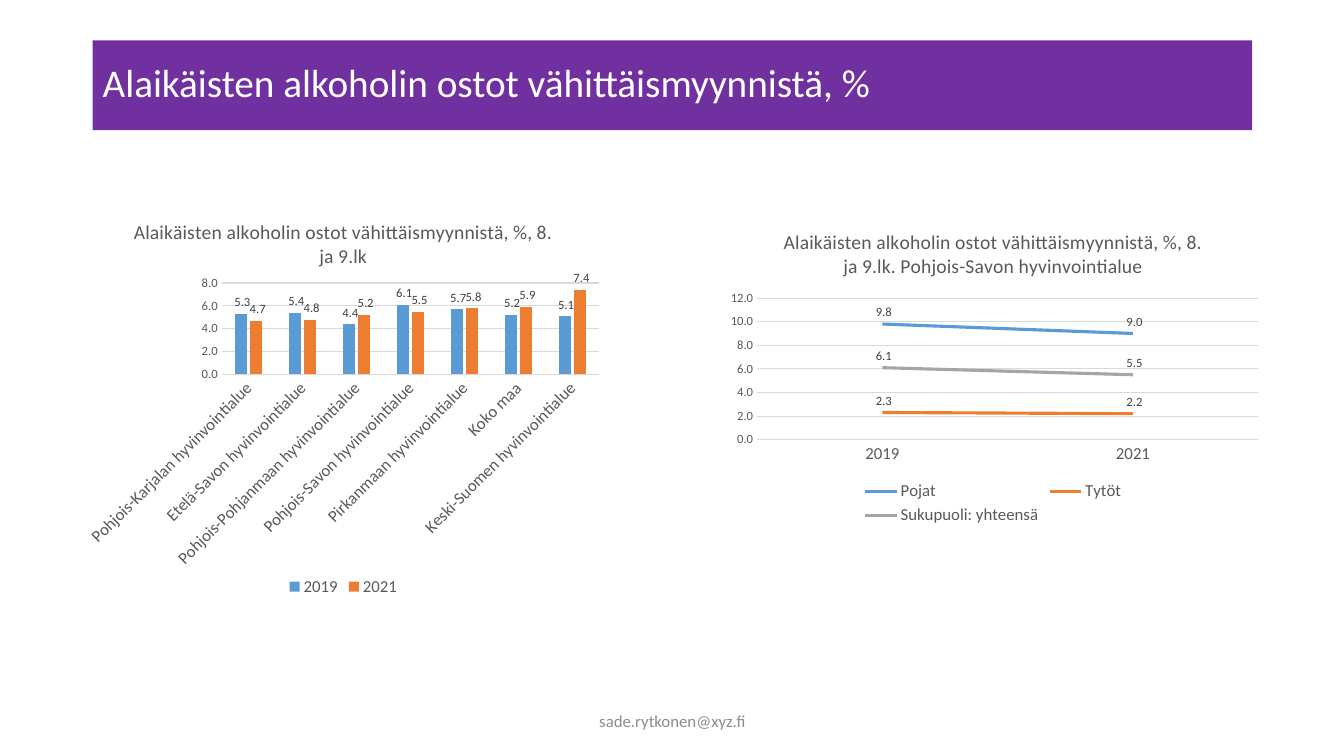
from dataclasses import dataclass

from pptx import Presentation
from pptx import util as u
from pptx.chart.data import CategoryChartData
from pptx.dml.color import RGBColor
from pptx.enum import chart as c
from pptx.enum import shapes, text

HEADING = "Alaikäisten alkoholin ostot vähittäismyynnistä, %"
FOOTER = "sade.rytkonen@xyz.fi"
REGION_CHART = {
    "kind": c.XL_CHART_TYPE.COLUMN_CLUSTERED,
    "box": (0.76, 2, 5.29, 3.96),
    "title": HEADING + ", 8. ja 9.lk",
    "categories": [
        "Pohjois-Karjalan hyvinvointialue",
        "Etelä-Savon hyvinvointialue",
        "Pohjois-Pohjanmaan hyvinvointialue",
        "Pohjois-Savon hyvinvointialue",
        "Pirkanmaan hyvinvointialue",
        "Koko maa",
        "Keski-Suomen hyvinvointialue",
    ],
    "series": {
        "2019": [5.3, 5.4, 4.4, 6.1, 5.7, 5.2, 5.1],
        "2021": [4.7, 4.8, 5.2, 5.5, 5.8, 5.9, 7.4],
    },
    "label_position": c.XL_LABEL_POSITION.OUTSIDE_END,
}
GENDER_CHART = {
    "kind": c.XL_CHART_TYPE.LINE,
    "box": (7.11, 2.11, 5.48, 3.14),
    "title": HEADING + ", 8. ja 9.lk. Pohjois-Savon hyvinvointialue",
    "categories": ["2019", "2021"],
    "series": {
        "Pojat": [9.8, 9.0],
        "Tytöt": [2.3, 2.2],
        "Sukupuoli: yhteensä": [6.1, 5.5],
    },
    "label_position": c.XL_LABEL_POSITION.ABOVE,
}


@dataclass(frozen=True)
class Theme:
    font: str = "Calibri"
    banner: str = "7030A0"
    banner_text: str = "FFFFFF"
    footer: str = "8C8C8C"
    chart_text: str = "595959"
    label_text: str = "404040"
    grid: str = "D9D9D9"
    series: tuple = ("5B9BD5", "ED7D31", "A5A5A5")
    heading_size: float = 28
    chart_title_size: float = 14
    axis_size: float = 12
    small_size: float = 9
    number_format: str = "#\\ ##0.0"


THEME = Theme()


def rgb(value):
    return RGBColor.from_string(value)


def set_font(font, size, color):
    font.name = THEME.font
    font.size = u.Pt(size)
    font.bold = False
    font.color.rgb = rgb(color)


def set_line(line, color, width):
    line.color.rgb = rgb(color)
    line.width = u.Pt(width)


def write_text(shape, wording, size, color, alignment):
    frame = shape.text_frame
    frame.word_wrap = True
    frame.vertical_anchor = text.MSO_ANCHOR.MIDDLE
    paragraph = frame.paragraphs[0]
    paragraph.text = wording
    paragraph.alignment = alignment
    set_font(paragraph.font, size, color)
    return paragraph


def style_axes(chart):
    category_axis, value_axis = chart.category_axis, chart.value_axis
    for axis, size in ((category_axis, THEME.axis_size), (value_axis, THEME.small_size)):
        axis.major_tick_mark = axis.minor_tick_mark = c.XL_TICK_MARK.NONE
        set_font(axis.tick_labels.font, size, THEME.chart_text)
    set_line(category_axis.format.line, THEME.grid, 0.75)
    value_axis.format.line.fill.background()
    value_axis.has_major_gridlines = True
    set_line(value_axis.major_gridlines.format.line, THEME.grid, 0.75)
    value_axis.tick_labels.number_format = THEME.number_format
    value_axis.tick_labels.number_format_is_linked = False


def add_chart(slide, content):
    data = CategoryChartData(number_format=THEME.number_format)
    data.categories = content["categories"]
    for name, values in content["series"].items():
        data.add_series(name, values)
    box = [u.Inches(length) for length in content["box"]]
    chart = slide.shapes.add_chart(content["kind"], *box, data).chart
    set_font(chart.font, 10, "000000")
    chart.has_title = True
    title = chart.chart_title
    title.include_in_layout = False
    paragraph = title.text_frame.paragraphs[0]
    paragraph.text = content["title"]
    set_font(paragraph.font, THEME.chart_title_size, THEME.chart_text)
    chart.has_legend = True
    chart.legend.position = c.XL_LEGEND_POSITION.BOTTOM
    chart.legend.include_in_layout = False
    set_font(chart.legend.font, THEME.axis_size, THEME.chart_text)
    style_axes(chart)

    plot = chart.plots[0]
    plot.vary_by_categories = False
    is_column = content["kind"] == c.XL_CHART_TYPE.COLUMN_CLUSTERED
    if is_column:
        plot.gap_width = 219
        plot.overlap = -27
        category_text = chart.category_axis.tick_labels.font._element.getparent().getparent().getparent()
        category_text.bodyPr.set("rot", "-2700000")
    for series, color in zip(plot.series, THEME.series):
        if is_column:
            series.format.fill.solid()
            series.format.fill.fore_color.rgb = rgb(color)
        else:
            series.smooth = False
            set_line(series.format.line, color, 2.25)
        labels = series.data_labels
        labels.show_value = True
        labels.position = content["label_position"]
        labels.number_format = THEME.number_format
        labels.number_format_is_linked = False
        set_font(labels.font, THEME.small_size, THEME.label_text)


def main():
    presentation = Presentation()
    presentation.slide_width = u.Inches(13.33)
    presentation.slide_height = u.Inches(7.5)
    slide = presentation.slides.add_slide(presentation.slide_layouts[6])

    banner = slide.shapes.add_shape(
        shapes.MSO_SHAPE.RECTANGLE, u.Inches(0.92), u.Inches(0.4), u.Inches(11.5), u.Inches(0.89)
    )
    banner.shadow.inherit = False
    banner.fill.solid()
    banner.fill.fore_color.rgb = rgb(THEME.banner)
    banner.line.fill.background()
    heading = write_text(banner, HEADING, THEME.heading_size, THEME.banner_text, text.PP_ALIGN.LEFT)
    heading.line_spacing = 0.9

    for content in (REGION_CHART, GENDER_CHART):
        add_chart(slide, content)

    footer = slide.shapes.add_textbox(u.Inches(4.42), u.Inches(6.95), u.Inches(4.5), u.Inches(0.4))
    write_text(footer, FOOTER, THEME.axis_size, THEME.footer, text.PP_ALIGN.CENTER)
    presentation.save("out.pptx")


if __name__ == "__main__":
    main()
